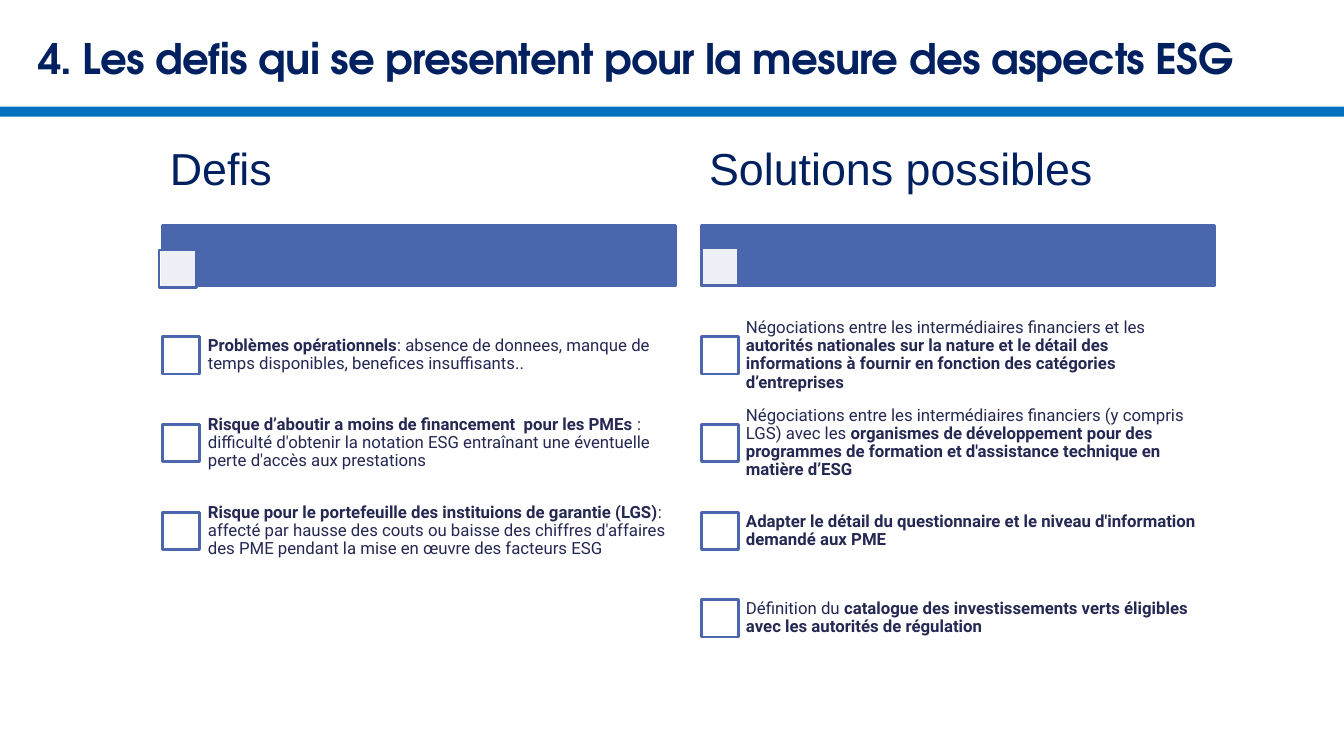
from dataclasses import dataclass

from lxml import etree
from pptx import Presentation
from pptx.dml.color import RGBColor
from pptx.enum import shapes, text
from pptx.oxml.ns import qn
from pptx.util import Cm, Pt


@dataclass(frozen=True)
class Theme:
    navy: str = "002060"
    ink: str = "242852"
    rule: str = "0070C0"
    accent: str = "4A66AC"
    white: str = "FFFFFF"
    title_font: str = "TeX Gyre Adventor"
    heading_font: str = "Arial"
    body_font: str = "Roboto"
    title_size: int = 30
    heading_size: int = 32
    body_size: int = 12
    line_width: int = 2


T = Theme()


def add_rect(x, y, w, h, fill, line=None):
    sp = s.shapes.add_shape(shapes.MSO_SHAPE.RECTANGLE, Cm(x), Cm(y), Cm(w), Cm(h))
    sp.shadow.inherit = False
    sp.fill.solid()
    sp.fill.fore_color.rgb = RGBColor.from_string(fill)
    if line:
        sp.line.color.rgb = RGBColor.from_string(line)
        sp.line.width = Pt(T.line_width)
    else:
        sp.line.fill.background()
    return sp


def add_text(x, y, w, h, runs, font, size, color, anchor, inset):
    """Add one paragraph made of (text, bold) runs; inset is (horizontal, vertical)."""
    tf = s.shapes.add_textbox(Cm(x), Cm(y), Cm(w), Cm(h)).text_frame
    tf.word_wrap = True
    tf.vertical_anchor = anchor
    tf.margin_left = tf.margin_right = Cm(inset[0])
    tf.margin_top = tf.margin_bottom = Cm(inset[1])
    p = tf.paragraphs[0]
    p.line_spacing = 0.9
    p.font.name, p.font.size = font, Pt(size)
    p.font.color.rgb = RGBColor.from_string(color)
    for content, bold in runs:
        r = p.add_run()
        r.text = content
        r.font.bold = bold
    return p


MIDDLE, BOTTOM = text.MSO_ANCHOR.MIDDLE, text.MSO_ANCHOR.BOTTOM
COLUMN_W = 12.93
BOX = 0.94
ROW_TOP, ROW_H = 7.85, 2.21

# Heading, column left, text offset, translucent box position, rows of runs
columns = [
    ("Defis", 4.09, 0.92, (4.01, 6.3), [
        [("Problèmes opérationnels", True),
         (": absence de donnees, manque de temps disponibles, benefices insuffisants..", False)],
        [("Risque d’aboutir a moins de financement  pour les PMEs ", True),
         (": difficulté d'obtenir la notation ESG entraînant une éventuelle "
          "perte d'accès aux prestations", False)],
        [("Risque pour le portefeuille des instituions de garantie (LGS)", True),
         (": affecté par hausse des couts ou baisse des chiffres d'affaires des PME "
          "pendant la mise en œuvre des facteurs ESG", False)],
    ]),
    ("Solutions possibles", 17.68, 0.89, (17.68, 6.25), [
        [("Négociations entre les intermédiaires financiers et les ", False),
         ("autorités nationales sur la nature et le détail des informations à fournir "
          "en fonction des catégories d’entreprises", True)],
        [("Négociations entre les intermédiaires financiers (y compris LGS) avec les ", False),
         ("organismes de développement pour des programmes de formation et "
          "d'assistance technique en matière d’ESG", True)],
        [("Adapter le détail du questionnaire et le niveau d'information demandé aux PME", True)],
        [("Définition du ", False),
         ("catalogue des investissements verts éligibles avec les autorités de régulation", True)],
    ]),
]

prs = Presentation()
prs.slide_width, prs.slide_height = Cm(33.87), Cm(19.05)
s = prs.slides.add_slide(prs.slide_layouts[6])

# Title and rule
add_rect(0, 2.69, 33.87, 0.25, T.rule)
p = add_text(0.71, 0.38, 32.49, 1.85,
             [("4. Les defis qui se presentent pour la mesure des aspects ESG", True)],
             T.title_font, T.title_size, T.navy, BOTTOM, (0.25, 0.13))
p.runs[0].font._element.set("spc", "-50")

# Two columns of checkbox rows
for heading, left, text_dx, tint_at, rows in columns:
    add_rect(left, 5.69, COLUMN_W, 1.52, T.accent, T.accent)
    tint = add_rect(*tint_at, BOX, BOX, T.white, T.accent)
    rgb = tint.fill._xPr.find(qn("a:solidFill"))[0]
    etree.SubElement(rgb, qn("a:alpha")).set("val", "90000")
    add_text(left, 2.95, COLUMN_W, 2.74, [(heading, False)],
             T.heading_font, T.heading_size, T.navy, MIDDLE, (0.19, 0.1))
    for i, runs in enumerate(rows):
        top = ROW_TOP + i * ROW_H
        add_rect(left, top + (ROW_H - BOX) / 2, BOX, BOX, T.white, T.accent)
        add_text(left + text_dx, top, 12.01, ROW_H, runs,
                 T.body_font, T.body_size, T.ink, MIDDLE, (0.23, 0.23))

prs.save("out.pptx")
